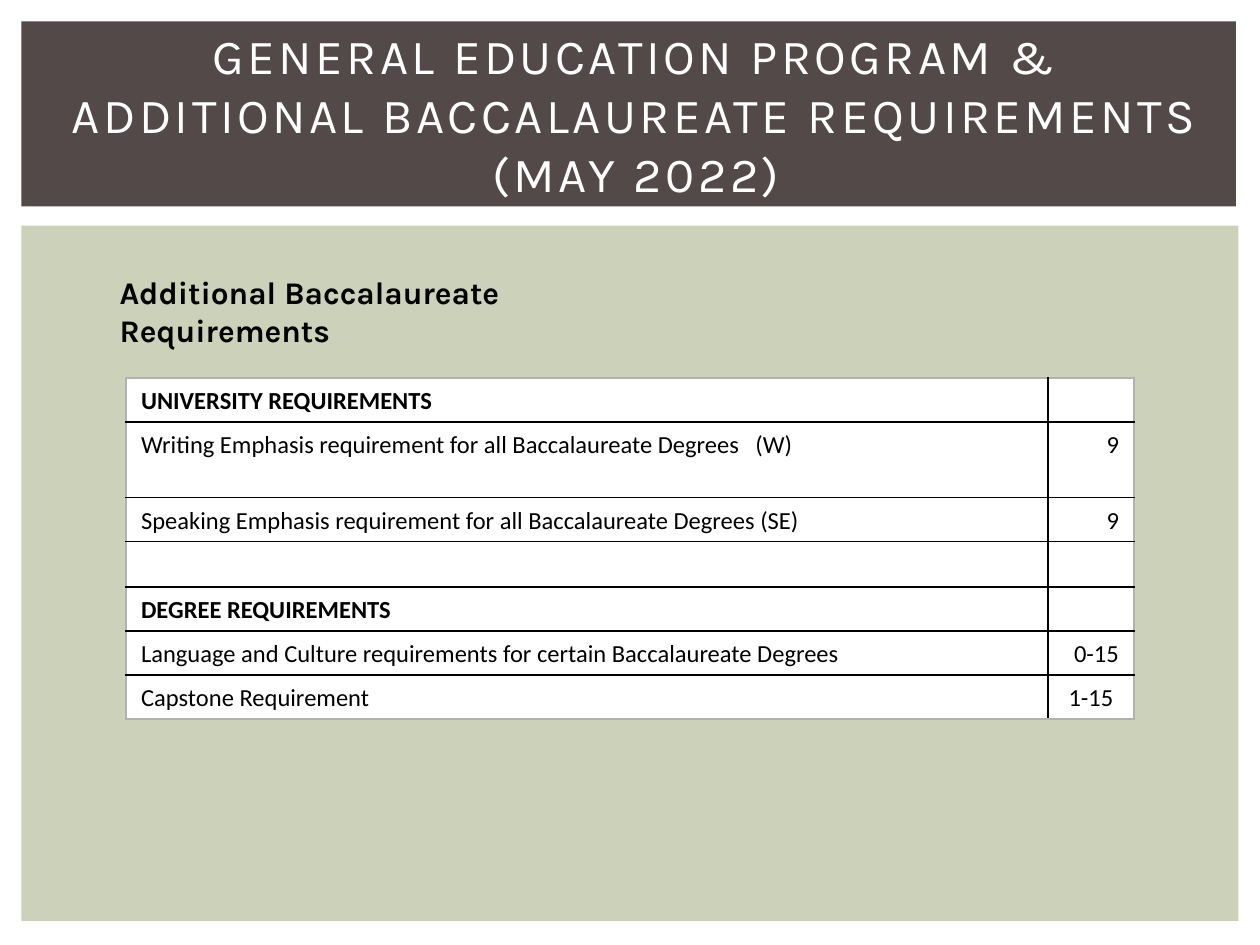
from lxml import etree
from pptx import Presentation
from pptx.dml.color import RGBColor
from pptx.enum.shapes import MSO_SHAPE
from pptx.enum.text import MSO_ANCHOR, MSO_AUTO_SIZE, PP_ALIGN
from pptx.oxml.ns import qn
from pptx.util import Pt

RECT = MSO_SHAPE.RECTANGLE
MIDDLE = MSO_ANCHOR.MIDDLE
NO_FIT = MSO_AUTO_SIZE.NONE
LEFT, CENTER, RIGHT = PP_ALIGN.LEFT, PP_ALIGN.CENTER, PP_ALIGN.RIGHT

BROWN, GREEN, WHITE, BLACK, GRAY = "534949", "CCD1B9", "FFFFFF", "000000", "B2B2B2"

# Label, hours, row height; headings are the rows in capitals
ROWS = [
    ("UNIVERSITY REQUIREMENTS", "", 25),
    ("Writing Emphasis requirement for all Baccalaureate Degrees   (W)", "9", 43),
    ("Speaking Emphasis requirement for all Baccalaureate Degrees (SE)", "9", 25),
    ("", "", 26),
    ("DEGREE REQUIREMENTS", "", 25),
    ("Language and Culture requirements for certain Baccalaureate Degrees", "0-15", 25),
    ("Capstone Requirement", "1-15 ", 25),
]
COLS = [527, 49]


def color(code):
    return RGBColor.from_string(code)


def style(para, face, size, code, bold=False):
    for run in para.runs:
        font = run.font
        font.name, font.size, font.bold = face, Pt(size), bold
        font.color.rgb = color(code)


def add_panel(slide, left, top, width, height, code):
    panel = slide.shapes.add_shape(RECT, Pt(left), Pt(top), Pt(width), Pt(height))
    panel.shadow.inherit = False
    panel.fill.solid()
    panel.fill.fore_color.rgb = color(code)
    panel.line.fill.background()


def set_title(slide, text):
    title = slide.shapes.title
    title.left, title.top, title.width, title.height = Pt(27.4), Pt(23.8), Pt(672), Pt(82.8)
    frame = title.text_frame
    frame.text = text
    frame.auto_size, frame.vertical_anchor, frame.word_wrap = NO_FIT, MIDDLE, True
    para = frame.paragraphs[0]
    para.alignment = CENTER
    style(para, "Karla", 28, WHITE)
    para.runs[0].font._element.set("spc", "200")
    # Keep the title in front of the panels
    slide.shapes._spTree.append(title._element)


def add_label(slide, text):
    box = slide.shapes.add_textbox(Pt(61.2), Pt(152.6), Pt(325.4), Pt(50))
    frame = box.text_frame
    frame.word_wrap = True
    frame.text = text
    style(frame.paragraphs[0], "Karla", 18, BLACK, True)


def add_edge(cell, side, code):
    edge = etree.SubElement(cell._tc.get_or_add_tcPr(), qn("a:ln" + side), w="12700")
    fill = etree.SubElement(edge, qn("a:solidFill"))
    etree.SubElement(fill, qn("a:srgbClr"), val=code)


def fill_cell(cell, text, align, bold, edges):
    cell.margin_left = cell.margin_right = Pt(8.6)
    cell.margin_top = cell.margin_bottom = Pt(3.6)
    cell.text = text
    para = cell.text_frame.paragraphs[0]
    para.alignment, para.line_spacing = align, 1.07
    style(para, "Calibri", 14, BLACK, bold)
    if not text:
        # Small end mark, so that blank cells keep the row height
        etree.SubElement(para._p, qn("a:endParaRPr"), sz="1400")
    for side, code in edges.items():
        add_edge(cell, side, code)
    cell.fill.solid()
    cell.fill.fore_color.rgb = color(WHITE)


def add_grid(slide):
    high = sum(row[2] for row in ROWS)
    shape = slide.shapes.add_table(len(ROWS), len(COLS), Pt(72), Pt(216), Pt(sum(COLS)), Pt(high))
    table = shape.table
    table.first_row = table.horz_banding = False
    for col, width in zip(table.columns, COLS):
        col.width = Pt(width)
    last = len(ROWS) - 1
    for i, (label, hours, height) in enumerate(ROWS):
        table.rows[i].height = Pt(height)
        for j, (text, align) in enumerate([(label, LEFT), (hours, RIGHT)]):
            # Gray outside, black inside
            edges = {
                "L": BLACK if j else GRAY,
                "R": GRAY if j else BLACK,
                "T": BLACK if i else GRAY,
                "B": GRAY if i == last else BLACK,
            }
            fill_cell(table.cell(i, j), text, align, label.isupper(), edges)


def main():
    deck = Presentation()
    deck.slide_width, deck.slide_height = Pt(720), Pt(540)
    slide = deck.slides.add_slide(deck.slide_layouts[5])
    # Background panels
    add_panel(slide, 12.2, 128.9, 695.5, 397.4, GREEN)
    add_panel(slide, 12.2, 12.2, 694, 105.8, BROWN)
    # Text and table
    set_title(slide, "GENERAL EDUCATION PROGRAM & ADDITIONAL BACCALAUREATE REQUIREMENTS (MAY 2022)")
    add_label(slide, "Additional Baccalaureate Requirements")
    add_grid(slide)
    deck.save("out.pptx")


if __name__ == "__main__":
    main()
